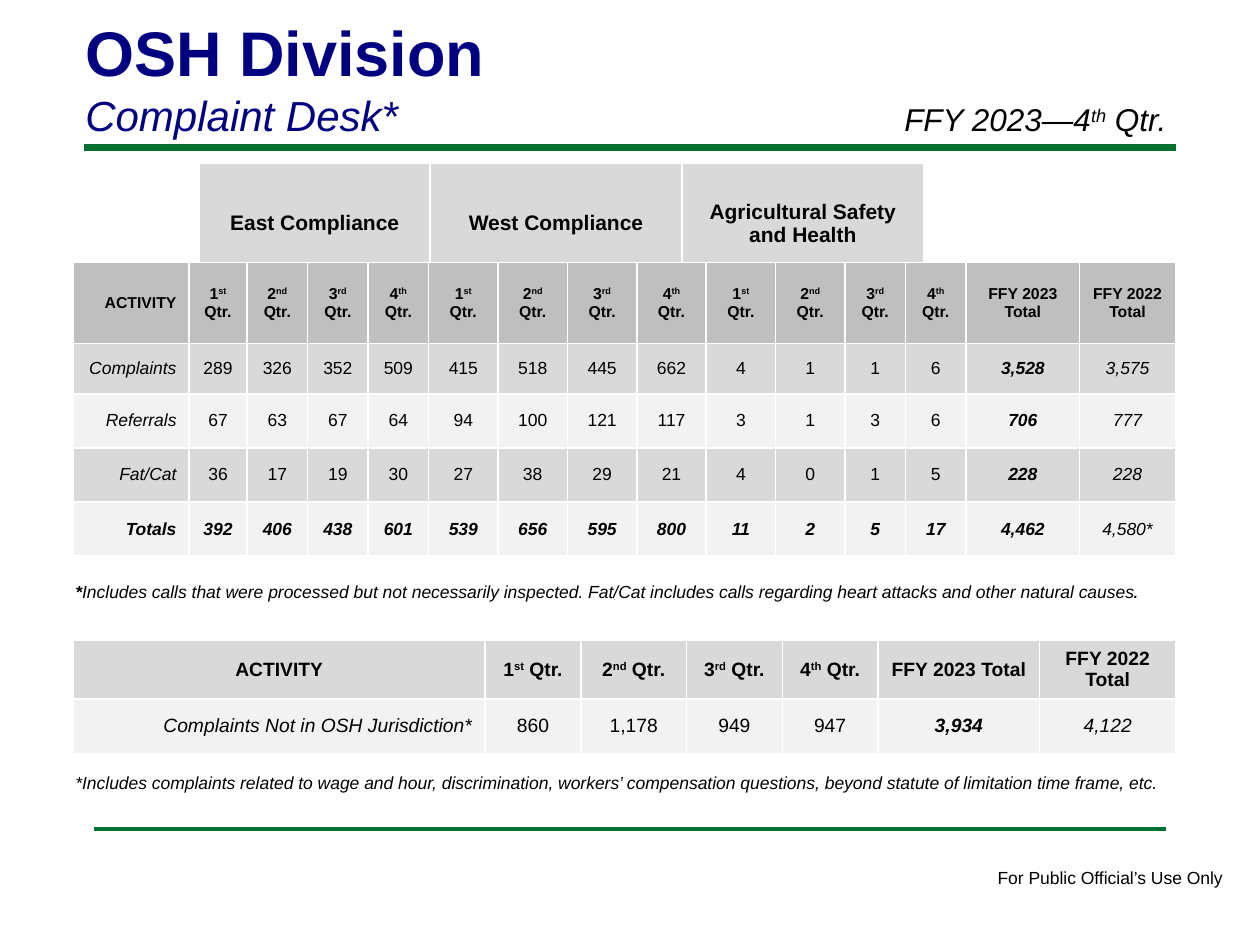
from lxml import etree
from pptx import Presentation
from pptx.dml.color import RGBColor
from pptx.enum.shapes import MSO_CONNECTOR
from pptx.enum.text import MSO_ANCHOR, MSO_AUTO_SIZE, PP_ALIGN
from pptx.oxml.ns import qn
from pptx.util import Cm, Pt

CENTER, RIGHT = PP_ALIGN.CENTER, PP_ALIGN.RIGHT
MIDDLE = MSO_ANCHOR.MIDDLE
FIT_SHAPE = MSO_AUTO_SIZE.SHAPE_TO_FIT_TEXT
STRAIGHT = MSO_CONNECTOR.STRAIGHT
COLORS = {
    "black": "000000", "navy": "000080", "green": "007030",
    "dark": "BFBFBF", "mid": "D9D9D9", "light": "F2F2F2",
}


def rgb(name):
    return RGBColor.from_string(COLORS[name])


def write(p, text, size=10, bold=False, italic=False, color="black", font="Arial"):
    """Add text to a paragraph; parts between ^ marks are superscript."""
    for i, part in enumerate(text.split("^")):
        r = p.add_run()
        r.text = part
        r.font.name, r.font.size = font, Pt(size)
        r.font.bold, r.font.italic = bold, italic
        r.font.color.rgb = rgb(color)
        if i % 2:
            r.font._element.set("baseline", "30000")


class Slide:
    def __init__(self, prs):
        self.s = prs.slides.add_slide(prs.slide_layouts[6])

    def line(self, x1, x2, y, width):
        ln = self.s.shapes.add_connector(STRAIGHT, Cm(x1), Cm(y), Cm(x2), Cm(y))
        ln.line.color.rgb = rgb("green")
        ln.line.width = Pt(width)
        etree.SubElement(ln._element.spPr, qn("a:effectLst"))

    def text(self, x, y, w, h, *paragraphs, wrap=True):
        """Each paragraph is a list of (text, format) runs."""
        sp = self.s.shapes.add_textbox(Cm(x), Cm(y), Cm(w), Cm(h))
        tf = sp.text_frame
        tf.word_wrap = wrap
        tf.auto_size = FIT_SHAPE
        for i, runs in enumerate(paragraphs):
            p = tf.add_paragraph() if i else tf.paragraphs[0]
            for text, fmt in runs:
                write(p, text, **fmt)

    def table(self, x, y, widths, heights, rows, fills, head_size,
              body_size=10, head_align=CENTER):
        frame = self.s.shapes.add_table(len(rows), len(widths), Cm(x), Cm(y),
                                        Cm(sum(widths)), Cm(sum(heights)))
        tbl = frame.table
        for col, w in zip(tbl.columns, widths):
            col.width = Cm(w)
        for row, h in zip(tbl.rows, heights):
            row.height = Cm(h)
        last = len(widths) - 1
        for i, row in enumerate(rows):
            for j, text in enumerate(row):
                cell = tbl.cell(i, j)
                cell.fill.solid()
                cell.fill.fore_color.rgb = rgb(fills[i])
                cell.vertical_anchor = MIDDLE
                total = row[0] == "Totals"
                if i == 0:
                    fmt = dict(size=head_size, bold=True)
                    align = CENTER if j else head_align
                else:
                    fmt = dict(size=body_size,
                               bold=j == last - 1 or (total and j < last),
                               italic=total or j in (0, last - 1, last))
                    align = CENTER if j else RIGHT
                for k, part in enumerate(text.split("\n")):
                    tf = cell.text_frame
                    p = tf.add_paragraph() if k else tf.paragraphs[0]
                    p.alignment = align
                    write(p, part, **fmt)


def main():
    prs = Presentation()
    prs.slide_width, prs.slide_height = Cm(25.4), Cm(19.05)
    s = Slide(prs)
    quarters = ["1^st^ Qtr.", "2^nd^ Qtr.", "3^rd^ Qtr.", "4^th^ Qtr."]

    # Rules and footer
    s.line(1.7, 23.7, 2.97, 4)
    s.line(1.9, 23.5, 16.71, 2)
    s.text(19.86, 17.35, 5.1, 0.69,
           [("For Public Official’s Use Only", {})], wrap=False)

    # Note on the activity table
    note = dict(italic=True)
    s.text(1.27, 11.51, 22.43, 1.27, [
        ("*", dict(bold=True, italic=True)),
        ("Includes calls that were processed but not necessarily inspected. "
         "Fat/Cat includes calls regarding heart attacks and other natural causes", note),
        (".", dict(size=12, italic=True))])

    # Region headings above the activity table
    s.table(4.02, 3.3, [4.65, 5.08, 4.87], [2.41],
            [["East Compliance", "West Compliance", "Agricultural Safety and Health"]],
            ["mid"], head_size=12)

    # Title
    s.text(1.47, 0.15, 20.95, 2.82,
           [("OSH Division", dict(size=36, bold=True, color="navy"))],
           [("Complaint Desk*", dict(size=24, italic=True, color="navy"))])

    # Complaints outside jurisdiction
    s.table(1.48, 12.9, [8.3, 1.93, 2.13, 1.93, 1.93, 3.26, 2.74], [1.1, 1.1],
            [["ACTIVITY", *quarters, "FFY 2023 Total", "FFY 2022 Total"],
             ["Complaints Not in OSH Jurisdiction*",
              "860", "1,178", "949", "947", "3,934", "4,122"]],
            ["mid", "light"], head_size=11, body_size=11)
    s.text(1.27, 15.44, 22.66, 0.69, [
        ("*Includes complaints related to wage and hour, discrimination, workers’ "
         "compensation questions, beyond statute of limitation time frame, etc.", note)])

    # Activity by region and quarter
    activity = [
        ["ACTIVITY", *quarters * 3, "FFY 2023 Total", "FFY 2022\nTotal"],
        "Complaints 289 326 352 509 415 518 445 662 4 1 1 6 3,528 3,575".split(),
        "Referrals 67 63 67 64 94 100 121 117 3 1 3 6 706 777".split(),
        "Fat/Cat 36 17 19 30 27 38 29 21 4 0 1 5 228 228".split(),
        "Totals 392 406 438 601 539 656 595 800 11 2 5 17 4,462 4,580*".split(),
    ]
    s.table(1.48, 5.29,
            [2.33, 1.17] + [1.22] * 3 + [1.4] * 6 + [1.22] * 2 + [2.29, 1.93],
            [1.63, 1.02] + [1.09] * 3, activity,
            ["dark", "mid", "light", "mid", "light"], head_size=9, head_align=RIGHT)

    # Reporting period
    s.text(17.98, 1.9, 6.35, 1.02,
           [("FFY 2023—4^th^ Qtr.", dict(size=18, italic=True))])

    prs.save("out.pptx")


if __name__ == "__main__":
    main()
